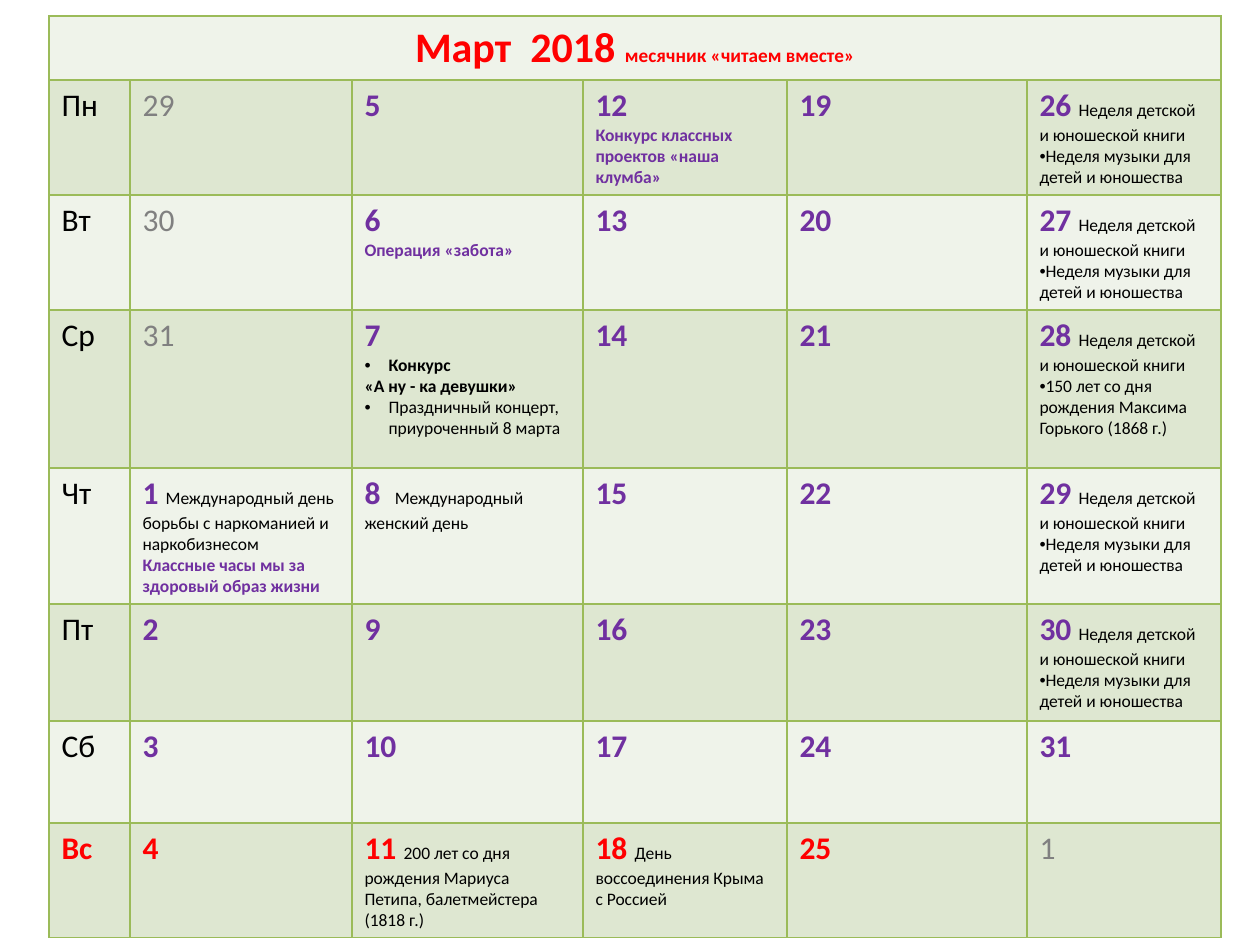
"""Build a one-slide school calendar for March 2018 as a table."""
import dataclasses
import typing

import lxml.etree
import pptx
import pptx.dml.color
import pptx.enum.text
import pptx.oxml.ns
import pptx.util

SCALE = 914400 / 126


@dataclasses.dataclass(frozen=True)
class Theme:
    font: str = "Calibri"
    bullet_font: str = "Arial"
    title_size: int = 24
    subtitle_size: int = 11
    day_size: int = 18
    note_size: int = 10
    text: str = "000000"
    accent: str = "7030A0"
    holiday: str = "FF0000"
    muted: str = "808080"
    border: str = "9BBB59"
    bands: tuple[str, str] = ("EFF3EA", "DEE7D1")


T = Theme()


class Run(typing.NamedTuple):
    text: str
    size: int = T.note_size
    color: str = T.text
    bold: bool = False


class Para(typing.NamedTuple):
    runs: tuple[Run, ...]
    bullet: bool = False
    indent: int = 0
    align: typing.Any = None


class Event(typing.NamedTuple):
    beside: str = ""
    below: tuple[Para, ...] = ()
    gap: str = " "


def note(text: str, bullet: bool = False, indent: int = 0, **style: typing.Any) -> Para:
    return Para((Run(text, **style),), bullet, indent)


def campaign(text: str) -> Para:
    return note(text, color=T.accent, bold=True)


BOOK_WEEK = "Неделя детской и юношеской книги"
MUSIC_WEEK = Event(BOOK_WEEK, (note("Неделя музыки для детей и юношества", True),))

EVENTS = {
    1: Event("Международный день борьбы с наркоманией и наркобизнесом",
             (campaign("Классные часы мы за здоровый образ жизни"),)),
    6: Event(below=(campaign("Операция «забота»"),)),
    7: Event(below=(note("Конкурс", True, 24, bold=True),
                    note("«А ну - ка девушки»", bold=True),
                    note("Праздничный концерт, приуроченный 8 марта", True, 24))),
    8: Event("Международный женский день", gap="  "),
    11: Event("200 лет со дня рождения Мариуса Петипа, балетмейстера (1818 г.)"),
    12: Event(below=(campaign("Конкурс классных проектов «наша клумба»"),)),
    18: Event("День воссоединения Крыма с Россией"),
    28: Event(BOOK_WEEK, (note("150 лет со дня рождения Максима Горького (1868 г.)", True),)),
    **dict.fromkeys((26, 27, 29, 30), MUSIC_WEEK),
}
WEEKDAYS = ("Пн", "Вт", "Ср", "Чт", "Пт", "Сб", "Вс")
SUNDAY = 6
MONTH_DAYS = 31
FIRST_MONDAY = -2
COLS = (81, 222, 231, 204, 240, 194)
ROWS = (64, 114, 115, 158, 136, 117, 102, 114)
LEFT, TOP = 49, 16


def px(n: int) -> pptx.util.Emu:
    return pptx.util.Emu(round(n * SCALE))


def rgb(color: str) -> pptx.dml.color.RGBColor:
    return pptx.dml.color.RGBColor.from_string(color)


def add_node(parent: typing.Any, tag: str, **attrs: str) -> typing.Any:
    return lxml.etree.SubElement(parent, pptx.oxml.ns.qn(tag), attrs)


def style_cell(cell: typing.Any, fill: str) -> None:
    tc_pr = cell._tc.get_or_add_tcPr()
    for side in "LRTB":
        ln = add_node(tc_pr, f"a:ln{side}", w=str(pptx.util.Pt(1)))
        add_node(add_node(ln, "a:solidFill"), "a:srgbClr", val=T.border)
    cell.fill.solid()
    cell.fill.fore_color.rgb = rgb(fill)


def write_para(p: typing.Any, para: Para) -> None:
    p.alignment = para.align
    if para.bullet:
        p_pr = p._p.get_or_add_pPr()
        p_pr.set("marL", str(px(para.indent)))
        p_pr.set("indent", str(-px(para.indent)))
        add_node(p_pr, "a:buFont", typeface=T.bullet_font)
        add_node(p_pr, "a:buChar", char="•")
    for run in para.runs:
        r = p.add_run()
        r.text = run.text
        formats = {"name": T.font, "size": pptx.util.Pt(run.size), "bold": run.bold}
        for key, value in formats.items():
            setattr(r.font, key, value)
        r.font.color.rgb = rgb(run.color)


def write_cell(cell: typing.Any, paras: typing.Sequence[Para]) -> None:
    tf = cell.text_frame
    for i, para in enumerate(paras):
        write_para(tf.add_paragraph() if i else tf.paragraphs[0], para)


def day_paras(week: int, weekday: int) -> tuple[Para, ...]:
    day = FIRST_MONDAY + 7 * week + weekday
    if not 1 <= day <= MONTH_DAYS:
        outside = (day - 1) % MONTH_DAYS + 1
        return (Para((Run(str(outside), T.day_size, T.muted),)),)
    event = EVENTS.get(day, Event())
    color = T.holiday if weekday == SUNDAY else T.accent
    label = f"{day}{event.gap}" if event.beside else str(day)
    runs = (Run(label, T.day_size, color, True),)
    if event.beside:
        runs += (Run(event.beside),)
    return (Para(runs), *event.below)


def weekday_para(weekday: int) -> Para:
    off = weekday == SUNDAY
    return Para((Run(WEEKDAYS[weekday], T.day_size, T.holiday if off else T.text, off),))


def add_calendar(s: typing.Any) -> None:
    frame = s.shapes.add_table(len(ROWS), len(COLS), px(LEFT), px(TOP),
                               px(sum(COLS)), px(sum(ROWS)))
    table = frame.table
    for flag in ("first_row", "horz_banding"):
        setattr(table, flag, False)
    for column, width in zip(table.columns, COLS):
        column.width = px(width)
    for i, (row, height) in enumerate(zip(table.rows, ROWS)):
        row.height = px(height)
        for cell in row.cells:
            style_cell(cell, T.bands[i % 2])
    table.cell(0, 0).merge(table.cell(0, len(COLS) - 1))
    title = (Run("Март  2018 ", T.title_size, T.holiday, True),
             Run("месячник «читаем вместе»", T.subtitle_size, T.holiday, True))
    write_cell(table.cell(0, 0), (Para(title, align=pptx.enum.text.PP_ALIGN.CENTER),))
    for weekday in range(len(WEEKDAYS)):
        write_cell(table.cell(weekday + 1, 0), (weekday_para(weekday),))
        for week in range(len(COLS) - 1):
            write_cell(table.cell(weekday + 1, week + 1), day_paras(week, weekday))


def main() -> None:
    prs = pptx.Presentation()
    prs.slide_width, prs.slide_height = px(1260), px(945)
    s = prs.slides.add_slide(prs.slide_layouts[6])
    add_calendar(s)
    prs.save("out.pptx")


if __name__ == "__main__":
    main()
